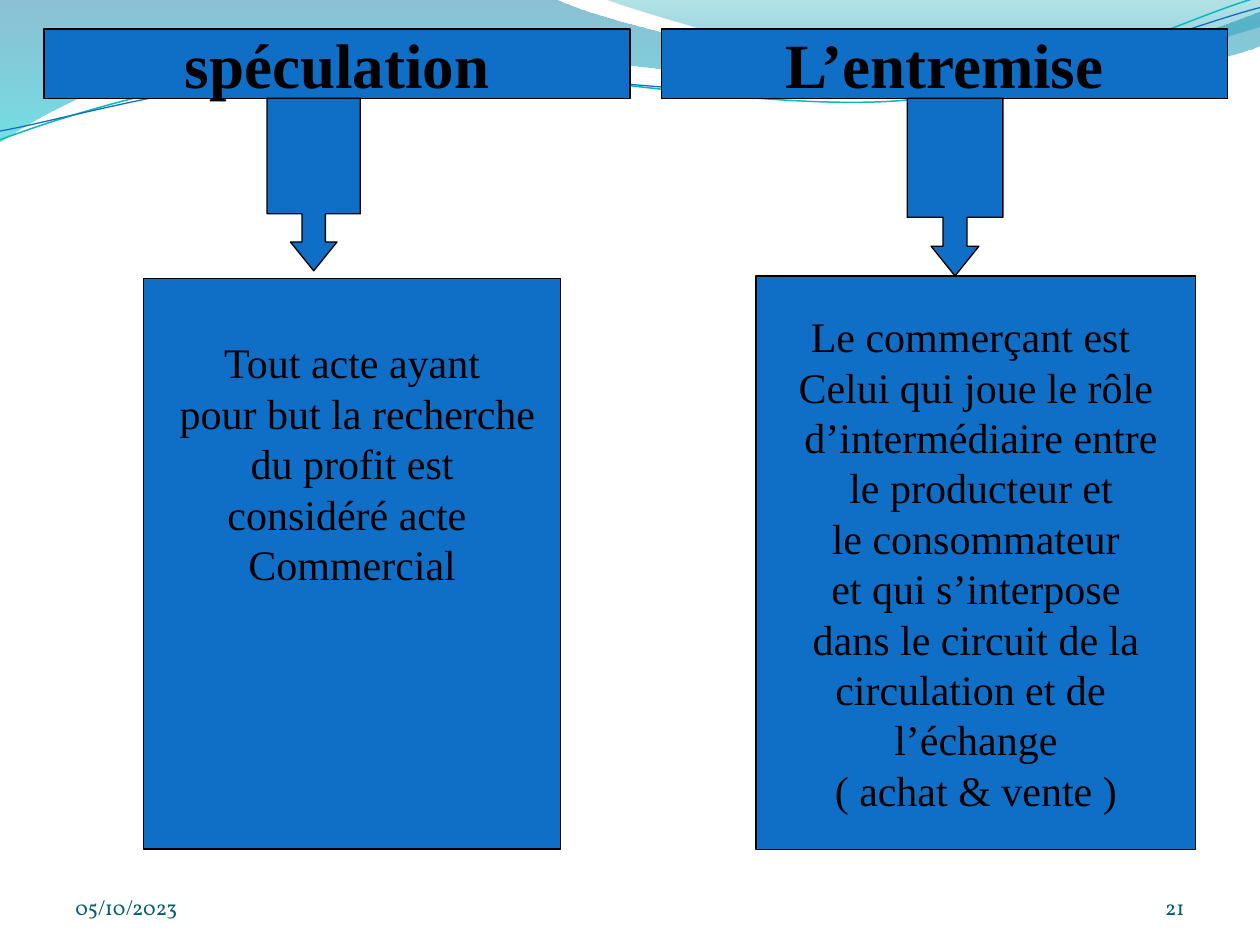
import math

from lxml import etree
from pptx import Presentation
from pptx.dml.color import RGBColor
from pptx.enum.shapes import MSO_SHAPE
from pptx.enum.text import MSO_ANCHOR, PP_ALIGN
from pptx.oxml.ns import qn
from pptx.util import Inches, Pt

RECT, CALLOUT = MSO_SHAPE.RECTANGLE, MSO_SHAPE.DOWN_ARROW_CALLOUT
LEFT, CENTER, RIGHT = PP_ALIGN.LEFT, PP_ALIGN.CENTER, PP_ALIGN.RIGHT
MIDDLE, BOTTOM = MSO_ANCHOR.MIDDLE, MSO_ANCHOR.BOTTOM

BLUE = RGBColor(0x0F, 0x6F, 0xC6)
BLACK = RGBColor(0, 0, 0)
TEAL = RGBColor(0x0A, 0xB8, 0xBF)
FOOTER = RGBColor(0x04, 0x5D, 0x75)
DEEP_BLUE, CYAN = RGBColor(0, 0x74, 0xA1), RGBColor(0, 0xC6, 0xCF)
DEEP_TEAL, SEA_BLUE = RGBColor(0, 0xA1, 0xA9), RGBColor(0, 0x8B, 0xBF)

LINE_HEIGHT = 0.4  # one line of 24 pt body text, in inches
LINE_TILT = 357.3  # rotation of the two thin lines, in degrees

# Outlines in inches: a pair is a straight step, six numbers are a Bezier curve
LEFT_WAVE = [
    (0, 0), (4.4, -0.01), (4.76, 0.17, 6.64, 0.63, 7.58, 0.63),
    (8.53, 0.63, 9.58, 0.26, 10, 0.09), (10.01, 0.36),
    (9.83, 0.44, 8.7, 0.76, 7.46, 0.75), (6.22, 0.75, 3.82, 0.28, 2.57, 0.34),
    (1.29, 0.36, 0.46, 0.83, -0.01, 1.13), (0, 0)]
RIGHT_WAVE = [
    (4.79, -0.01), (5.09, 0.11, 6.82, 0.62, 7.69, 0.65),
    (8.56, 0.69, 9.61, 0.32, 10, 0.21), (10, 0), (4.79, -0.01)]
TEAL_LINE = [
    (0, 1.11), (0.48, 0.93, 1.58, 0.57, 2.77, 0.52),
    (3.95, 0.47, 5.93, 0.89, 7.13, 0.8), (8.33, 0.71, 9.38, 0.15, 9.98, -0.02)]
BLUE_LINE = [
    (0, 1.04), (0.47, 0.96, 1.64, 0.61, 2.83, 0.56),
    (4.03, 0.51, 5.97, 0.84, 7.17, 0.75), (8.36, 0.67, 9.41, 0.21, 10, 0.06)]

SPECULATION = ["Tout acte ayant", " pour but la recherche", " du profit est ",
               "considéré acte ", "Commercial"]
ENTREMISE = ["Le commerçant est ", "Celui qui joue le rôle",
             " d’intermédiaire entre", " le producteur et",
             " le consommateur ", "et qui s’interpose",
             "dans le circuit de la", "circulation et de ", "l’échange",
             " ( achat & vente ) "]


def add_outline(shapes, steps, box, closed, rotation=0):
    """Freeform with true curves that fills the given box before rotation."""
    left, top, width, height = box
    ends = [(Inches(step[-2]), Inches(step[-1])) for step in steps]
    builder = shapes.build_freeform(*ends[0], scale=1.0)
    builder.add_line_segments(ends[1:], close=closed)
    sp = builder.convert_to_shape()
    sp.shadow.inherit = False
    sp.left, sp.top, sp.width, sp.height = map(Inches, box)
    sp.rotation = rotation

    turn = math.radians(-rotation)
    cos, sin = math.cos(turn), math.sin(turn)
    outline = next(sp._element.iter(qn("a:path")))
    outline.set("w", str(Inches(width)))
    outline.set("h", str(Inches(height)))
    for node, step in zip(list(outline), steps):
        if len(step) == 6:
            node.tag_name = None
            curve = etree.Element(qn("a:cubicBezTo"))
            outline.replace(node, curve)
            node = curve
        for pt in list(node):
            node.remove(pt)
        for x, y in zip(step[::2], step[1::2]):
            dx, dy = x - left - width / 2, y - top - height / 2
            etree.SubElement(
                node, qn("a:pt"),
                x=str(Inches(width / 2 + dx * cos - dy * sin)),
                y=str(Inches(height / 2 + dx * sin + dy * cos)))
    return sp


def add_wave(s, steps, box, stops):
    """Filled wave; each stop is position, colour and opacity."""
    sp = add_outline(s.shapes, steps, box, True)
    sp.line.fill.background()
    sp.fill.gradient()
    sp.fill.gradient_angle = 270
    for stop, (position, color, _) in zip(sp.fill.gradient_stops, stops):
        stop.position = position
        stop.color.rgb = color
    clrs = list(sp._element.spPr.iter(qn("a:srgbClr")))
    for clr, (_, _, opacity) in zip(clrs, stops):
        etree.SubElement(clr, qn("a:alpha"), val=str(opacity * 1000))


def add_wave_line(group, steps, box, color, width):
    sp = add_outline(group.shapes, steps, box, False, LINE_TILT)
    sp.fill.background()
    sp.line.color.rgb = color
    sp.line.width = Pt(width)


def write_text(sp, lines, size, font="Times New Roman", color=BLACK,
               bold=False, align=CENTER, anchor=MIDDLE, wrap=False):
    tf = sp.text_frame
    tf.word_wrap = wrap
    tf.vertical_anchor = anchor
    for i, line in enumerate(lines):
        p = tf.add_paragraph() if i else tf.paragraphs[0]
        p.alignment = align
        r = p.add_run()
        r.text = line
        r.font.size = Pt(size)
        r.font.name = font
        r.font.bold = bold
        r.font.color.rgb = color


def add_block(s, kind, box):
    sp = s.shapes.add_shape(kind, *map(Inches, box))
    sp.shadow.inherit = False
    sp.fill.solid()
    sp.fill.fore_color.rgb = BLUE
    sp.line.color.rgb = BLACK
    sp.line.width = Pt(0.75)
    return sp


def add_background(s):
    add_wave(s, LEFT_WAVE, (-0.01, -0.01, 10.02, 1.14),
             [(0, DEEP_BLUE, 45), (1, CYAN, 55)])
    add_wave(s, RIGHT_WAVE, (4.79, -0.01, 5.21, 0.7),
             [(0, DEEP_TEAL, 30), (0.8, SEA_BLUE, 45)])
    group = s.shapes.add_group_shape()
    add_wave_line(group, TEAL_LINE, (-0.02, 0.22, 10.02, 0.71), TEAL, 0.85)
    add_wave_line(group, BLUE_LINE, (-0.02, 0.3, 10.03, 0.58), BLUE, 0.75)


def add_footer(s, text, box, align):
    sp = s.shapes.add_textbox(*map(Inches, box))
    write_text(sp, [text], 12, font="Vollkorn", color=FOOTER, align=align,
               anchor=BOTTOM, wrap=True)


def add_column(s, title, lines, title_box, arrow_box, body_box, lift=0):
    """Title, arrow and body; lift is the number of lines left free below."""
    write_text(add_block(s, RECT, title_box), [title], 36, bold=True)

    arrow = add_block(s, CALLOUT, arrow_box)
    for i, value in enumerate((0.25, 0.25, 0.31, 0.67)):
        arrow.adjustments[i] = value

    body = add_block(s, RECT, body_box)
    body.text_frame.margin_bottom = Inches(0.05 + lift * LINE_HEIGHT)
    write_text(body, lines, 24)


def main():
    prs = Presentation()
    prs.slide_width, prs.slide_height = Inches(10), Inches(7.5)
    s = prs.slides.add_slide(prs.slide_layouts[6])

    add_background(s)
    add_footer(s, "05/10/2023", (0.5, 6.95, 2.33, 0.4), LEFT)
    add_footer(s, "21", (8.67, 6.95, 0.83, 0.4), RIGHT)
    add_column(s, "spéculation", SPECULATION, (0.35, 0.23, 4.65, 0.55),
               (2.12, 0.78, 0.74, 1.37), (1.14, 2.21, 3.31, 4.53), lift=4)
    add_column(s, "L’entremise", ENTREMISE, (5.25, 0.23, 4.49, 0.55),
               (7.2, 0.78, 0.76, 1.41), (6, 2.19, 3.49, 4.55))

    prs.save("out.pptx")


if __name__ == "__main__":
    main()
